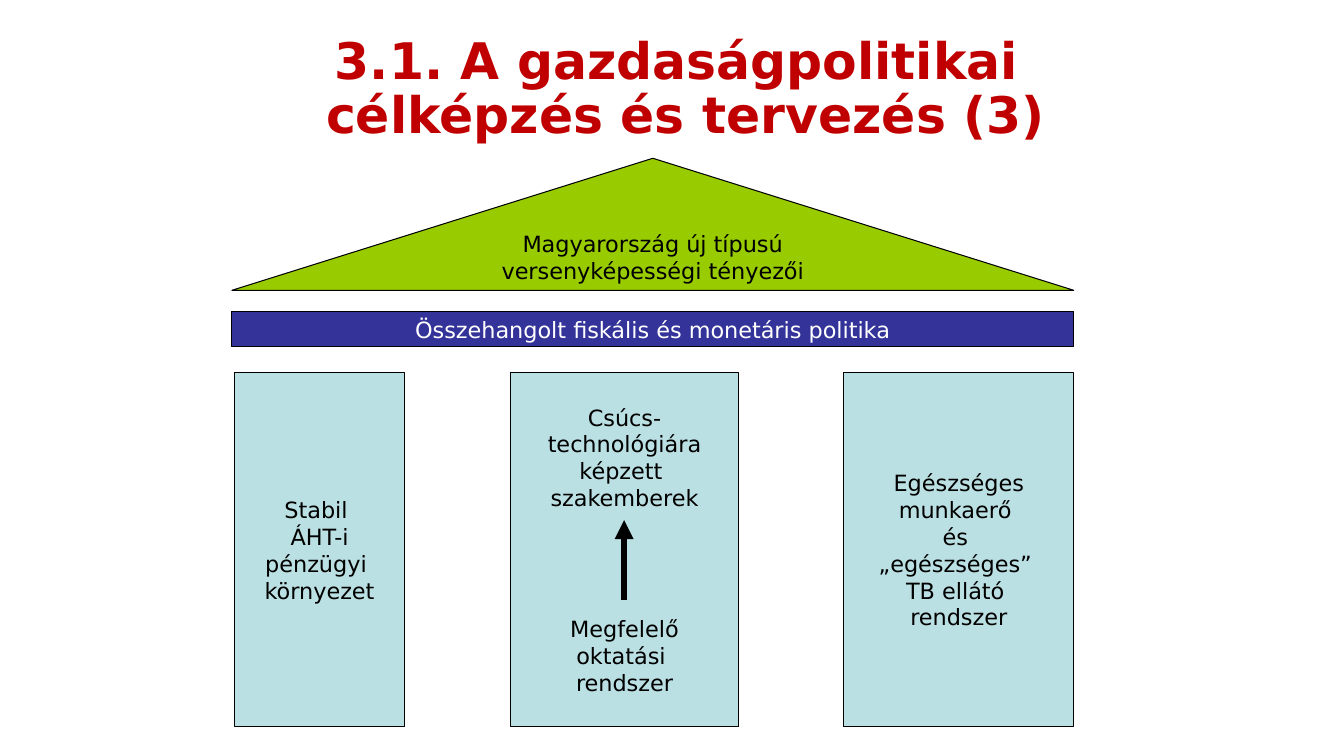
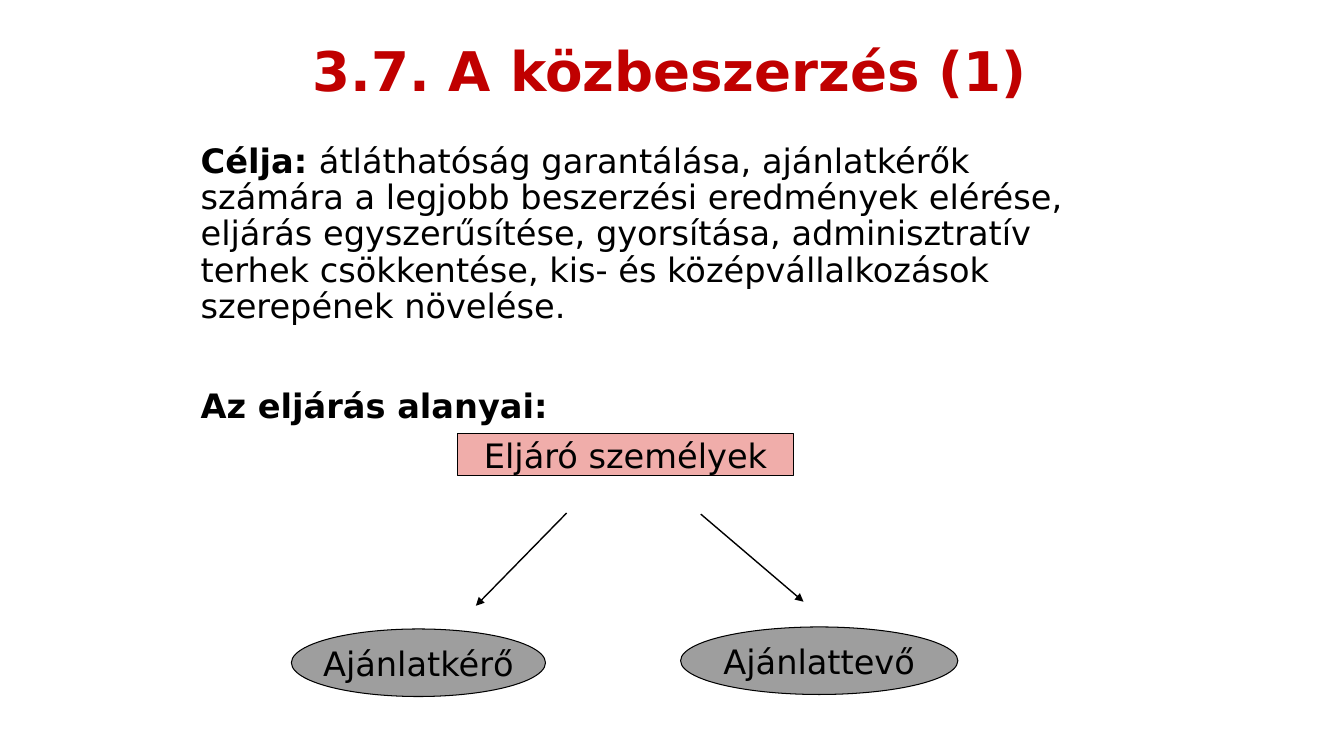
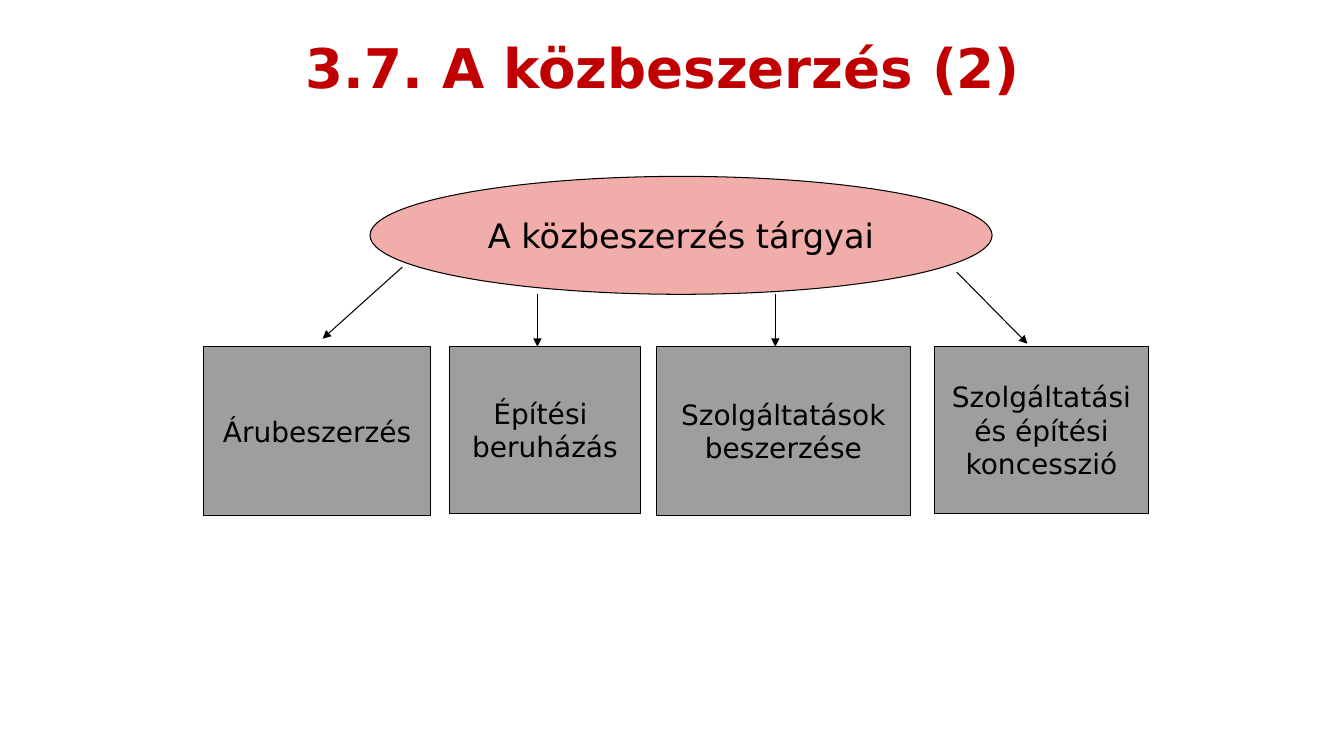
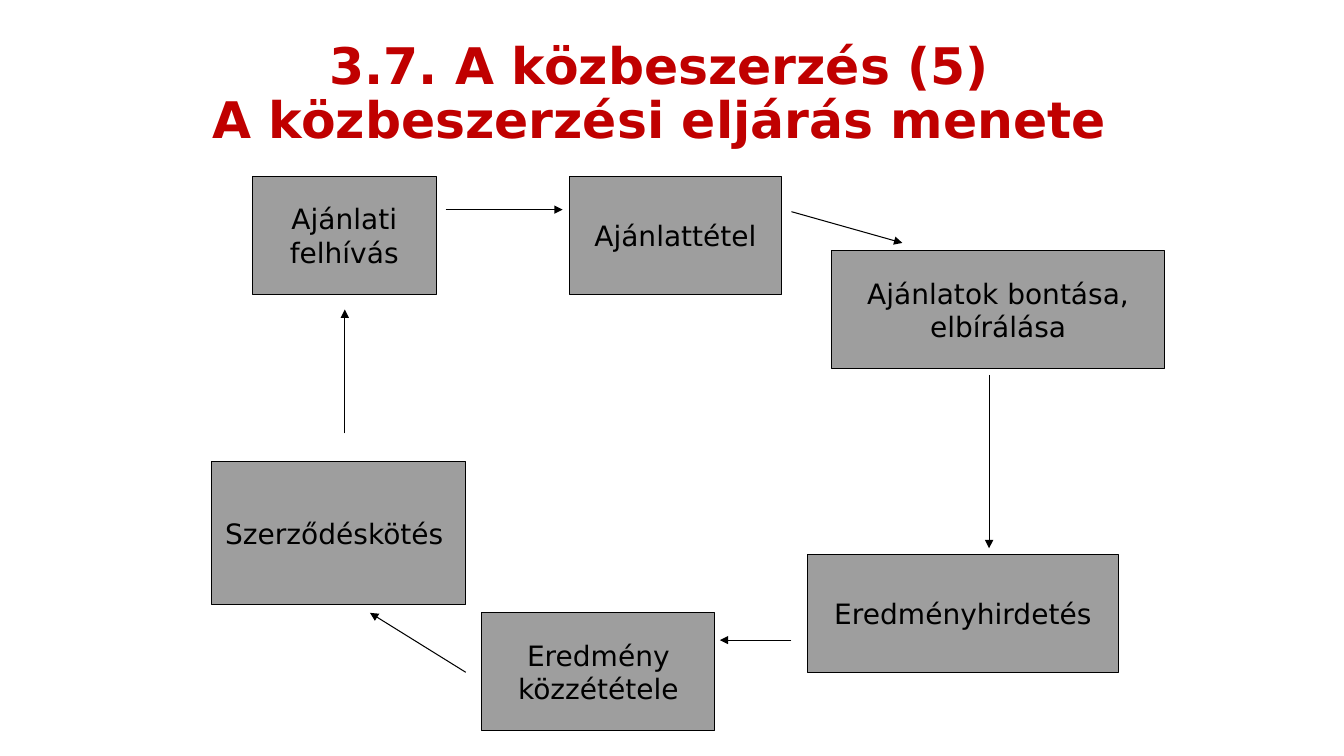
from dataclasses import dataclass

import pptx
import pptx.dml.color
import pptx.enum.shapes
import pptx.enum.text
import pptx.oxml
import pptx.oxml.ns
import pptx.util
from pptx.util import Inches

FONT = "DejaVu Sans"
BLACK, WHITE, RED = "000000", "FFFFFF", "C00000"
NAVY, GREEN, AQUA = "333399", "99CC00", "BBE0E3"
PINK, GREY = "F0ADAA", "9E9E9E"

SHAPES = pptx.enum.shapes.MSO_SHAPE
CENTER = pptx.enum.text.PP_ALIGN.CENTER
LEFT = pptx.enum.text.PP_ALIGN.LEFT
MIDDLE = pptx.enum.text.MSO_ANCHOR.MIDDLE
TOP = pptx.enum.text.MSO_ANCHOR.TOP
TITLE_ONLY, TITLE_AND_BODY = 5, 1


@dataclass
class Area:
    left: float
    top: float
    width: float
    height: float


@dataclass
class Box:
    """A filled shape; each text block holds one paragraph per line."""
    area: Area
    blocks: tuple[str, ...]
    fill: str = GREY
    size: float = 20
    color: str = BLACK
    kind: SHAPES = SHAPES.RECTANGLE
    block_gap: float = 0
    side_inset: float = 0.1
    end_inset: float = 0.05


@dataclass
class Arrow:
    start: tuple[float, float]
    end: tuple[float, float]
    weight: float = 0.75


def rgb(color: str) -> pptx.dml.color.RGBColor:
    return pptx.dml.color.RGBColor.from_string(color)


def set_attributes(target, values: dict) -> None:
    for name, value in values.items():
        setattr(target, name, value)


def format_font(font, size: float, color: str = BLACK, bold: bool = False) -> None:
    set_attributes(font, {"name": FONT, "size": pptx.util.Pt(size), "bold": bold})
    font.color.rgb = rgb(color)


def place(shape, area: Area) -> None:
    set_attributes(shape, {
        "left": Inches(area.left), "top": Inches(area.top),
        "width": Inches(area.width), "height": Inches(area.height)})


def prepare_placeholder(placeholder, area: Area, anchor):
    place(placeholder, area)
    frame = placeholder.text_frame
    set_attributes(frame, {
        "word_wrap": True, "vertical_anchor": anchor,
        "auto_size": pptx.enum.text.MSO_AUTO_SIZE.NONE})
    return frame


def add_page(deck, layout: int, title: str, area: Area, size: float):
    """Add a page whose title breaks lines at each vertical tab."""
    page = deck.slides.add_slide(deck.slide_layouts[layout])
    frame = prepare_placeholder(page.shapes.title, area, MIDDLE)
    para = frame.paragraphs[0]
    para.text = title
    set_attributes(para, {"alignment": CENTER, "line_spacing": 0.9})
    for span in para.runs:
        format_font(span.font, size, RED, bold=True)
    return page


def fill_body(page, area: Area, paragraphs: list, size: float, gap: float) -> None:
    """Write unbulleted paragraphs, each a list of (text, bold) spans."""
    frame = prepare_placeholder(page.placeholders[1], area, TOP)
    for index, spans in enumerate(paragraphs):
        para = frame.add_paragraph() if index else frame.paragraphs[0]
        properties = para._p.get_or_add_pPr()
        set_attributes(para, {
            "alignment": LEFT, "line_spacing": 0.9,
            "space_before": pptx.util.Pt(gap if index else 0)})
        properties.set("marL", "0")
        properties.set("indent", "0")
        properties.append(pptx.oxml.parse_xml(
            f'<a:buNone {pptx.oxml.ns.nsdecls("a")}/>'))
        for text, bold in spans:
            span = para.add_run()
            span.text = text
            format_font(span.font, size, bold=bold)


def add_box(page, box: Box) -> None:
    shape = page.shapes.add_shape(box.kind, 0, 0, 0, 0)
    place(shape, box.area)
    shape.shadow.inherit = False
    shape.fill.solid()
    shape.fill.fore_color.rgb = rgb(box.fill)
    shape.line.color.rgb = rgb(BLACK)
    shape.line.width = pptx.util.Pt(0.75)
    frame = shape.text_frame
    set_attributes(frame, {
        "word_wrap": False, "vertical_anchor": MIDDLE,
        "margin_left": Inches(box.side_inset), "margin_right": Inches(box.side_inset),
        "margin_top": Inches(box.end_inset), "margin_bottom": Inches(box.end_inset)})
    para = frame.paragraphs[0]
    for block_index, block in enumerate(box.blocks):
        for line_index, line in enumerate(block.split("\n")):
            if block_index or line_index:
                para = frame.add_paragraph()
            if block_index and not line_index:
                para.space_before = pptx.util.Pt(box.block_gap)
            para.alignment = CENTER
            span = para.add_run()
            span.text = line
            format_font(span.font, box.size, box.color)


def add_arrow(page, arrow: Arrow) -> None:
    ends = [Inches(value) for value in (*arrow.start, *arrow.end)]
    connector = page.shapes.add_connector(
        pptx.enum.shapes.MSO_CONNECTOR.STRAIGHT, *ends)
    connector.line.color.rgb = rgb(BLACK)
    connector.line.width = pptx.util.Pt(arrow.weight)
    namespace = pptx.oxml.ns.nsdecls("a")
    connector.line._get_or_add_ln().append(
        pptx.oxml.parse_xml(f'<a:tailEnd {namespace} type="triangle"/>'))
    connector._element.spPr.append(
        pptx.oxml.parse_xml(f"<a:effectLst {namespace}/>"))


def draw(page, boxes: list[Box], arrows: list[Arrow]) -> None:
    for box in boxes:
        add_box(page, box)
    for arrow in arrows:
        add_arrow(page, arrow)


def add_planning_page(deck) -> None:
    page = add_page(deck, TITLE_ONLY,
                    "3.1. A gazdaságpolitikai \vcélképzés és tervezés (3)",
                    Area(1.81, 0.16, 9.98, 1.47), 36)
    shared = {"size": 16, "side_inset": 0.07, "end_inset": 0.04}
    beam = Box(Area(2.3, 3.09, 8.35, 0.35),
               ("Összehangolt fiskális és monetáris politika",),
               NAVY, color=WHITE, **shared)
    roof = Box(Area(2.3, 1.57, 8.35, 1.31),
               ("Magyarország új típusú\nversenyképességi tényezői",),
               GREEN, kind=SHAPES.ISOSCELES_TRIANGLE, **shared)
    pillars = [
        (2.33, 1.68, ("Stabil \nÁHT-i\npénzügyi \nkörnyezet",)),
        (5.06, 2.27, ("Csúcs-\ntechnológiára\nképzett \nszakemberek",
                      "Megfelelő\noktatási \nrendszer")),
        (8.37, 2.28, ("Egészséges\nmunkaerő \nés \n„egészséges” \n"
                      "TB ellátó \nrendszer",)),
    ]
    boxes = [beam, roof] + [
        Box(Area(left, 3.7, width, 3.51), blocks, AQUA, block_gap=74.5, **shared)
        for left, width, blocks in pillars]
    draw(page, boxes, [Arrow((6.19, 5.95), (6.19, 5.16), 4.5)])


def add_parties_page(deck) -> None:
    page = add_page(deck, TITLE_AND_BODY, "3.7. A közbeszerzés (1)",
                    Area(1.63, -0.01, 10.03, 1.48), 39)
    purpose = ("átláthatóság garantálása, ajánlatkérők számára a legjobb "
               "beszerzési eredmények elérése, eljárás egyszerűsítése, "
               "gyorsítása, adminisztratív terhek csökkentése, kis- és "
               "középvállalkozások szerepének növelése.")
    fill_body(page, Area(1.89, 1.38, 9.29, 5.81),
              [[("Célja: ", True), (purpose, False)],
               [("Az eljárás alanyai:", True)]], size=24, gap=46)
    boxes = [
        Box(Area(4.54, 4.3, 3.33, 0.42), ("Eljáró személyek",), PINK, 24),
        Box(Area(2.89, 6.24, 2.52, 0.67), ("Ajánlatkérő",), size=24, kind=SHAPES.OVAL),
        Box(Area(6.75, 6.22, 2.75, 0.67), ("Ajánlattevő",), size=24, kind=SHAPES.OVAL),
    ]
    draw(page, boxes, [Arrow((5.62, 5.09), (4.72, 6.01), 1),
                       Arrow((6.95, 5.1), (7.97, 5.97), 1)])


def add_subjects_page(deck) -> None:
    page = add_page(deck, TITLE_ONLY, "3.7. A közbeszerzés (2) ",
                    Area(1.67, -0.03, 10, 1.47), 39)
    subjects = [
        (2.02, 2.25, 1.67, "Árubeszerzés"),
        (4.46, 1.89, 1.65, "Építési \nberuházás"),
        (6.51, 2.52, 1.67, "Szolgáltatások\nbeszerzése"),
        (9.27, 2.12, 1.65, "Szolgáltatási\nés építési\nkoncesszió"),
    ]
    boxes = [Box(Area(3.67, 1.75, 6.17, 1.17), ("A közbeszerzés tárgyai",),
                 PINK, 24, kind=SHAPES.OVAL)]
    boxes += [Box(Area(left, 3.44, width, height), (text,))
              for left, width, height, text in subjects]
    draw(page, boxes, [
        Arrow((3.99, 2.65), (3.2, 3.36)),
        Arrow((5.33, 2.92), (5.33, 3.44)),
        Arrow((7.69, 2.92), (7.69, 3.44)),
        Arrow((9.49, 2.7), (10.19, 3.41)),
    ])


def add_procedure_page(deck) -> None:
    page = add_page(deck, TITLE_ONLY,
                    "3.7. A közbeszerzés (5)\vA közbeszerzési eljárás menete",
                    Area(1.53, 0.21, 10.02, 1.47), 36)
    step_height = 1.17
    steps = [
        (2.5, 1.75, 1.83, step_height, "Ajánlati\nfelhívás"),
        (5.65, 1.75, 2.1, step_height, "Ajánlattétel"),
        (8.25, 2.49, 3.3, step_height, "Ajánlatok bontása,\nelbírálása"),
        (8.01, 5.5, 3.08, step_height, "Eredményhirdetés"),
        (4.78, 6.08, 2.31, step_height, "Eredmény\nközzététele"),
        (2.1, 4.58, 2.52, 1.42, "Szerződéskötés "),
    ]
    boxes = [Box(Area(*place_and_size), (text,)) for *place_and_size, text in steps]
    draw(page, boxes, [
        Arrow((4.42, 2.08), (5.58, 2.08)),
        Arrow((7.85, 2.1), (8.95, 2.41)),
        Arrow((9.81, 3.72), (9.81, 5.44)),
        Arrow((7.85, 6.35), (7.14, 6.35)),
        Arrow((4.62, 6.67), (3.67, 6.08)),
        Arrow((3.42, 4.3), (3.42, 3.07)),
    ])


def main() -> None:
    deck = pptx.Presentation()
    set_attributes(deck, {"slide_width": Inches(13.33), "slide_height": Inches(7.5)})
    add_planning_page(deck)
    add_parties_page(deck)
    add_subjects_page(deck)
    add_procedure_page(deck)
    deck.save("out.pptx")


if __name__ == "__main__":
    main()
